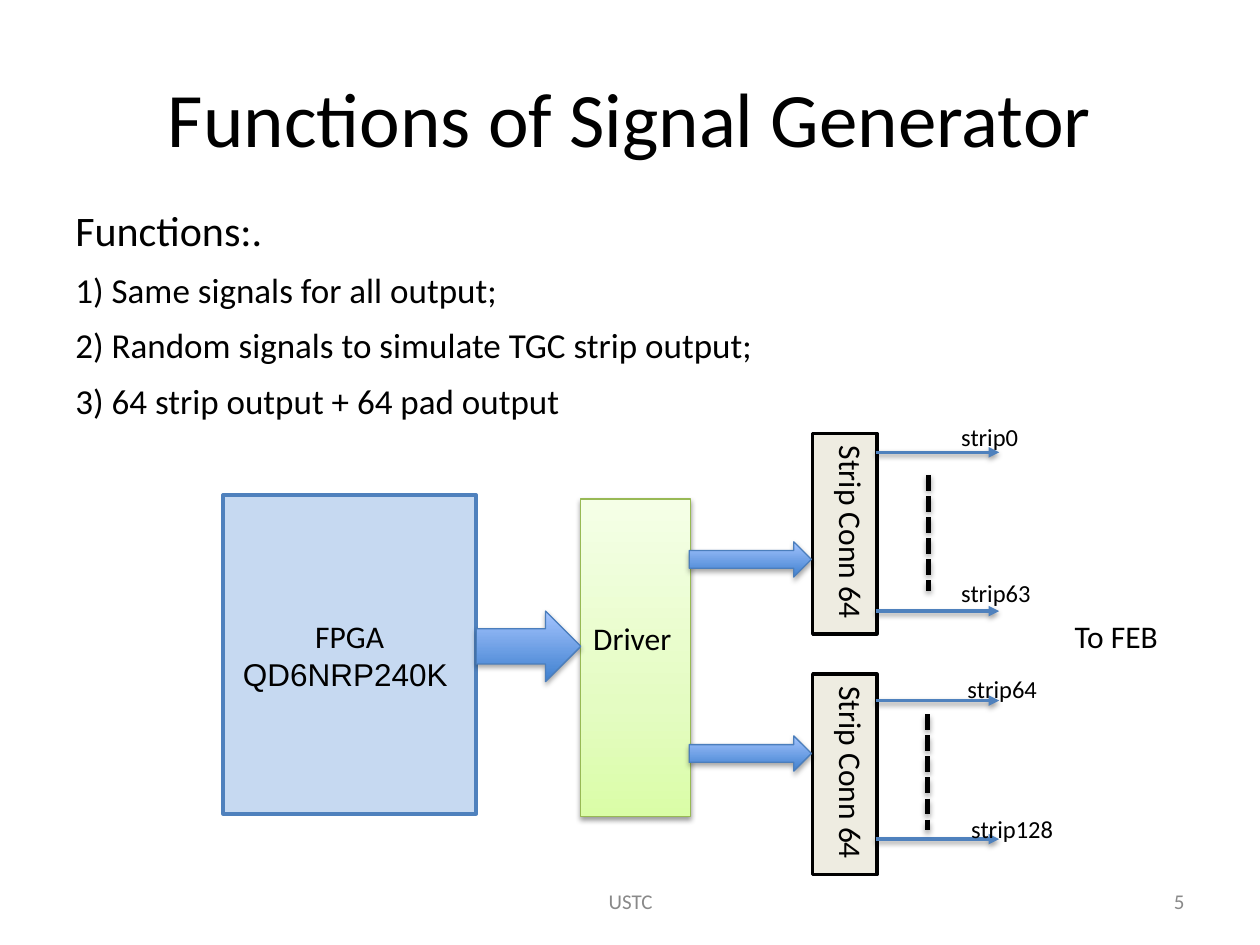
from lxml.etree import SubElement
from pptx import Presentation
from pptx.dml.color import RGBColor
from pptx.enum.dml import MSO_LINE
from pptx.enum.shapes import MSO_CONNECTOR, MSO_SHAPE
from pptx.enum.text import MSO_ANCHOR, MSO_AUTO_SIZE, PP_ALIGN
from pptx.oxml import parse_xml
from pptx.oxml.ns import nsdecls, qn
from pptx.util import Inches, Pt

BLACK, GRAY, BLUE = "000000", "898989", "4F81BD"
GREEN_STOPS = [(0, "DAFDA7"), (35, "E4FCC2"), (100, "F5FFE7")]
BLUE_STOPS = [(0, "3F80CE"), (100, "A4C4FF")]


def color(value):
    return RGBColor.from_string(value)


def add_line_of_text(frame, text, size, ink=BLACK, align=PP_ALIGN.LEFT,
                     font="Calibri", first=False):
    para = frame.paragraphs[0] if first else frame.add_paragraph()
    para.alignment = align
    span = para.add_run()
    span.text = text
    span.font.size = Pt(size)
    span.font.name = font
    span.font.color.rgb = color(ink)
    return para


def add_label(page, place, text, size, ink=BLACK, align=PP_ALIGN.LEFT,
              anchor=MSO_ANCHOR.TOP):
    box = page.shapes.add_textbox(*map(Inches, place))
    frame = box.text_frame
    frame.word_wrap = True
    frame.vertical_anchor = anchor
    add_line_of_text(frame, text, size, ink, align, first=True)
    return frame


def set_shadow(shape, opacity, blur=3.1, distance=1.7):
    """Cast a soft black shadow straight down."""
    properties = shape._element.spPr
    for old in properties.findall(qn("a:effectLst")):
        properties.remove(old)
    properties.append(parse_xml(
        f'<a:effectLst {nsdecls("a")}><a:outerShdw blurRad="{Pt(blur)}" '
        f'dist="{Pt(distance)}" dir="5400000" rotWithShape="0">'
        f'<a:srgbClr val="{BLACK}"><a:alpha val="{opacity * 1000}"/></a:srgbClr>'
        '</a:outerShdw></a:effectLst>'))


def set_gradient(shape, stops):
    """Fill from the bottom edge to the top edge."""
    shape.fill.gradient()
    shape.fill.gradient_angle = 90
    stop_list = shape._element.spPr.find(qn("a:gradFill")).find(qn("a:gsLst"))
    for old in list(stop_list):
        stop_list.remove(old)
    for position, value in stops:
        stop = SubElement(stop_list, qn("a:gs"), pos=str(position * 1000))
        SubElement(stop, qn("a:srgbClr"), val=value)


def add_block(page, kind, place, fill, line, width):
    block = page.shapes.add_shape(kind, *map(Inches, place))
    block.shadow.inherit = False
    if isinstance(fill, str):
        block.fill.solid()
        block.fill.fore_color.rgb = color(fill)
    else:
        set_gradient(block, fill)
    block.line.color.rgb = color(line)
    block.line.width = Pt(width)
    block.text_frame.word_wrap = True
    block.text_frame.vertical_anchor = MSO_ANCHOR.MIDDLE
    return block


def add_block_arrow(page, place):
    arrow = add_block(page, MSO_SHAPE.RIGHT_ARROW, place, BLUE_STOPS, "4B7EBC", 0.75)
    set_shadow(arrow, 35)


def add_line(page, start, end, ink, width, opacity):
    line = page.shapes.add_connector(
        MSO_CONNECTOR.STRAIGHT, *map(Inches, (*start, *end)))
    line.line.color.rgb = color(ink)
    line.line.width = Pt(width)
    set_shadow(line, opacity)
    return line


def add_strip(page, y, text, label_place):
    line = add_line(page, (6.95, y), (7.93, y), BLUE, 2, 38)
    SubElement(line.line._get_or_add_ln(), qn("a:tailEnd"), type="triangle")
    add_label(page, label_place, text, 14)


def add_connector_block(page, top):
    block = add_block(page, MSO_SHAPE.RECTANGLE, (6.45, top, 0.51, 1.59),
                      "EEECE1", BLACK, 2)
    frame = block.text_frame
    frame.vertical_anchor = MSO_ANCHOR.TOP
    frame.word_wrap = False
    frame.auto_size = MSO_AUTO_SIZE.SHAPE_TO_FIT_TEXT
    frame._txBody.bodyPr.set("vert", "eaVert")
    add_line_of_text(frame, "Strip Conn 64", 18, first=True)


def add_dashes(page, x, top):
    line = add_line(page, (x, top), (x, top + 0.92), BLACK, 3, 35)
    line.line.dash_style = MSO_LINE.SQUARE_DOT


def add_function_list(page):
    frame = add_label(page, (0.5, 1.57, 9, 1.91), "Functions:.", 24,
                      align=PP_ALIGN.JUSTIFY)
    frame.paragraphs[0].space_before = Pt(7.8)
    for text in (" Same signals for all output;",
                 " Random signals to simulate TGC strip output;",
                 " 64 strip output + 64 pad output"):
        para = add_line_of_text(frame, text, 20, align=PP_ALIGN.JUSTIFY)
        para.space_before = Pt(7.8)
        properties = para._p.get_or_add_pPr()
        properties.set("marL", "0")
        properties.set("indent", "0")
        SubElement(properties, qn("a:buFont"), typeface="Calibri")
        SubElement(properties, qn("a:buAutoNum"), type="arabicParenR")


def main():
    deck = Presentation()
    deck.slide_width, deck.slide_height = Inches(10), Inches(7.5)
    page = deck.slides.add_slide(deck.slide_layouts[6])

    # Title, list and footer
    add_label(page, (0.5, 0.3, 9, 1.25), "Functions of Signal Generator", 44,
              align=PP_ALIGN.CENTER, anchor=MSO_ANCHOR.MIDDLE)
    add_function_list(page)
    add_label(page, (3.42, 6.95, 3.17, 0.4), "USTC", 12, GRAY,
              PP_ALIGN.CENTER, MSO_ANCHOR.MIDDLE)
    add_label(page, (7.17, 6.95, 2.33, 0.4), "5", 12, GRAY,
              PP_ALIGN.RIGHT, MSO_ANCHOR.MIDDLE)

    # Connector blocks
    for top in (3.44, 5.35):
        add_connector_block(page, top)

    # FPGA and driver
    fpga = add_block(page, MSO_SHAPE.RECTANGLE, (1.77, 3.93, 2.01, 2.53),
                     "C6D9F1", BLUE, 2)
    add_line_of_text(fpga.text_frame, "FPGA", 18, align=PP_ALIGN.CENTER, first=True)
    add_line_of_text(fpga.text_frame, "QD6NRP240K ", 18, align=PP_ALIGN.CENTER,
                     font="Arial")
    driver = add_block(page, MSO_SHAPE.RECTANGLE, (4.61, 3.96, 0.87, 2.52),
                       GREEN_STOPS, "98B955", 0.75)
    set_shadow(driver, 38)
    driver.text_frame.margin_bottom = Inches(0.37)
    add_line_of_text(driver.text_frame, "Driver", 18, first=True)

    # Signal flow between the blocks
    for place in ((3.78, 4.85, 0.83, 0.56), (5.47, 4.3, 0.97, 0.28),
                  (5.47, 5.84, 0.97, 0.28)):
        add_block_arrow(page, place)

    # Strip outputs
    for y, text, place in (
            (3.59, "strip0", (7.53, 3.3, 0.79, 0.34)),
            (4.85, "strip63", (7.53, 4.54, 0.79, 0.34)),
            (5.56, "strip64", (7.58, 5.3, 0.79, 0.34)),
            (6.66, "strip128", (7.61, 6.41, 0.9, 0.34))):
        add_strip(page, y, text, place)
    add_dashes(page, 7.36, 5.67)
    add_dashes(page, 7.37, 3.77)
    add_label(page, (8.43, 4.85, 0.88, 0.4), "To FEB", 18)

    deck.save("out.pptx")


if __name__ == "__main__":
    main()
